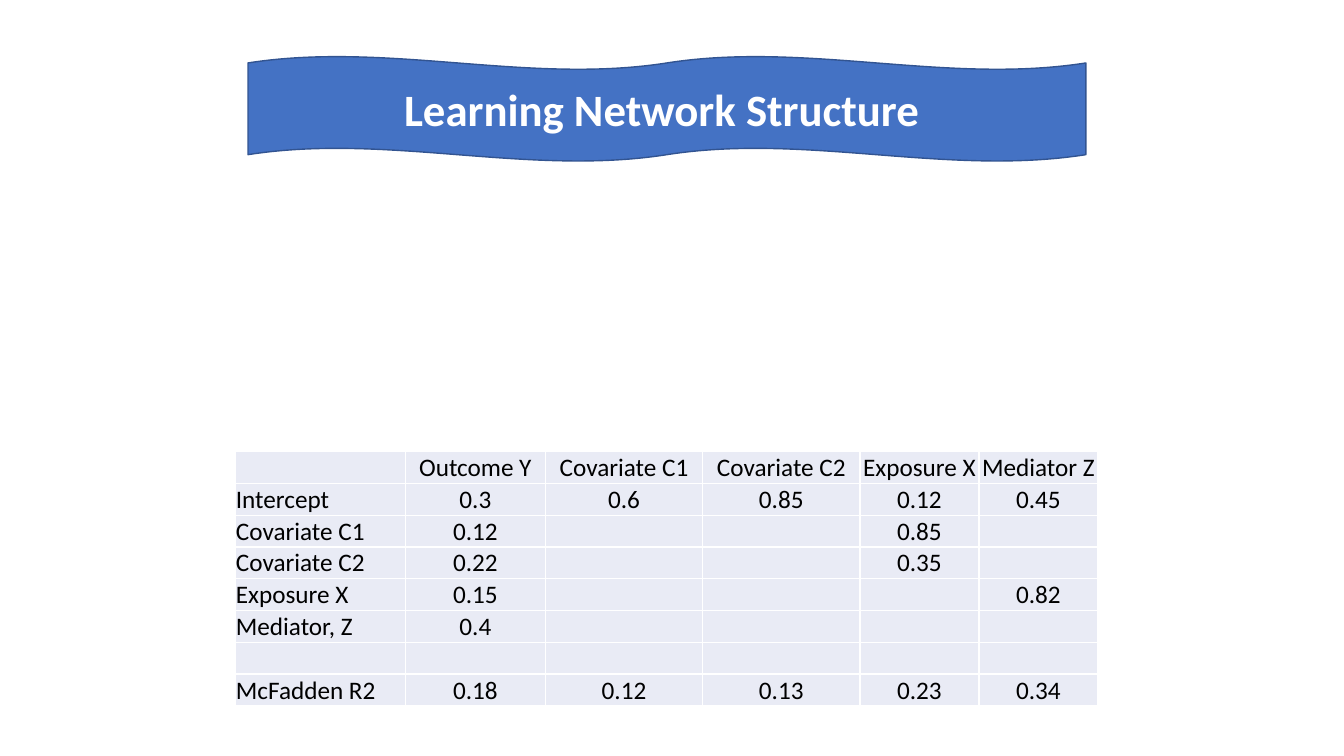
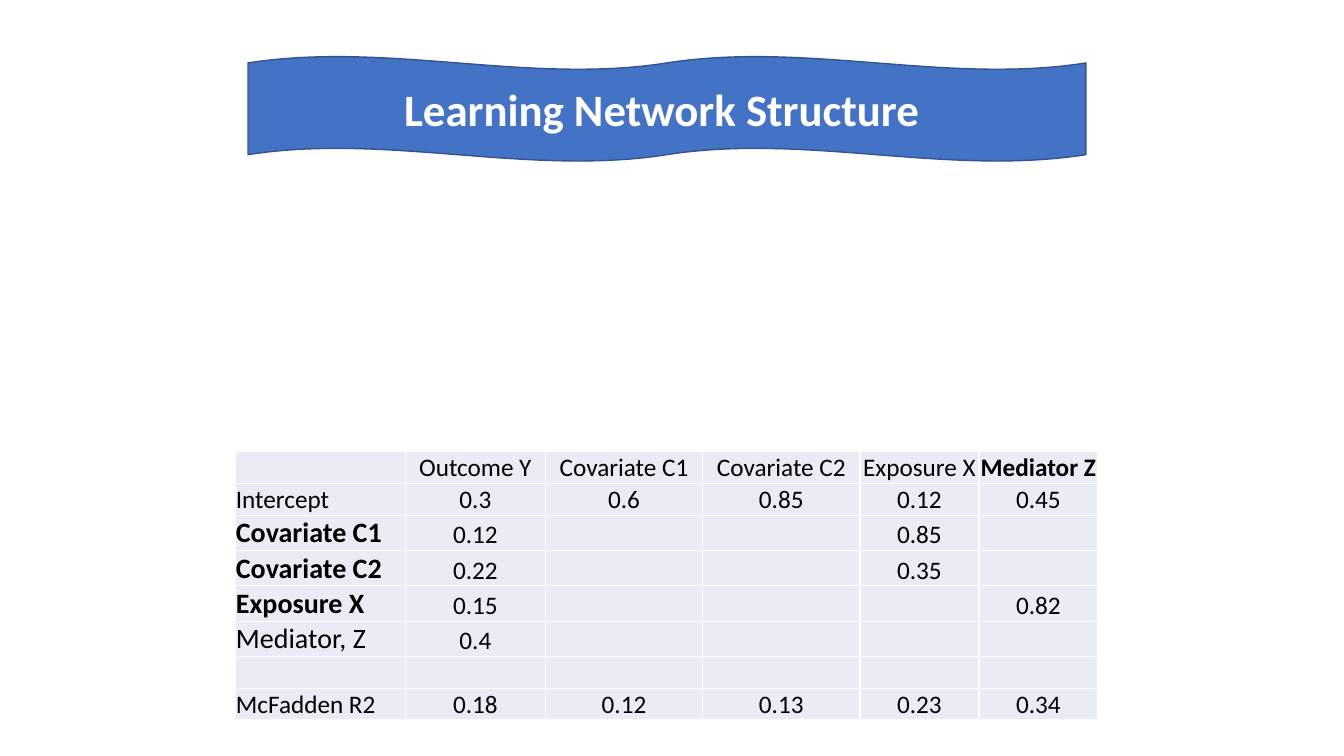
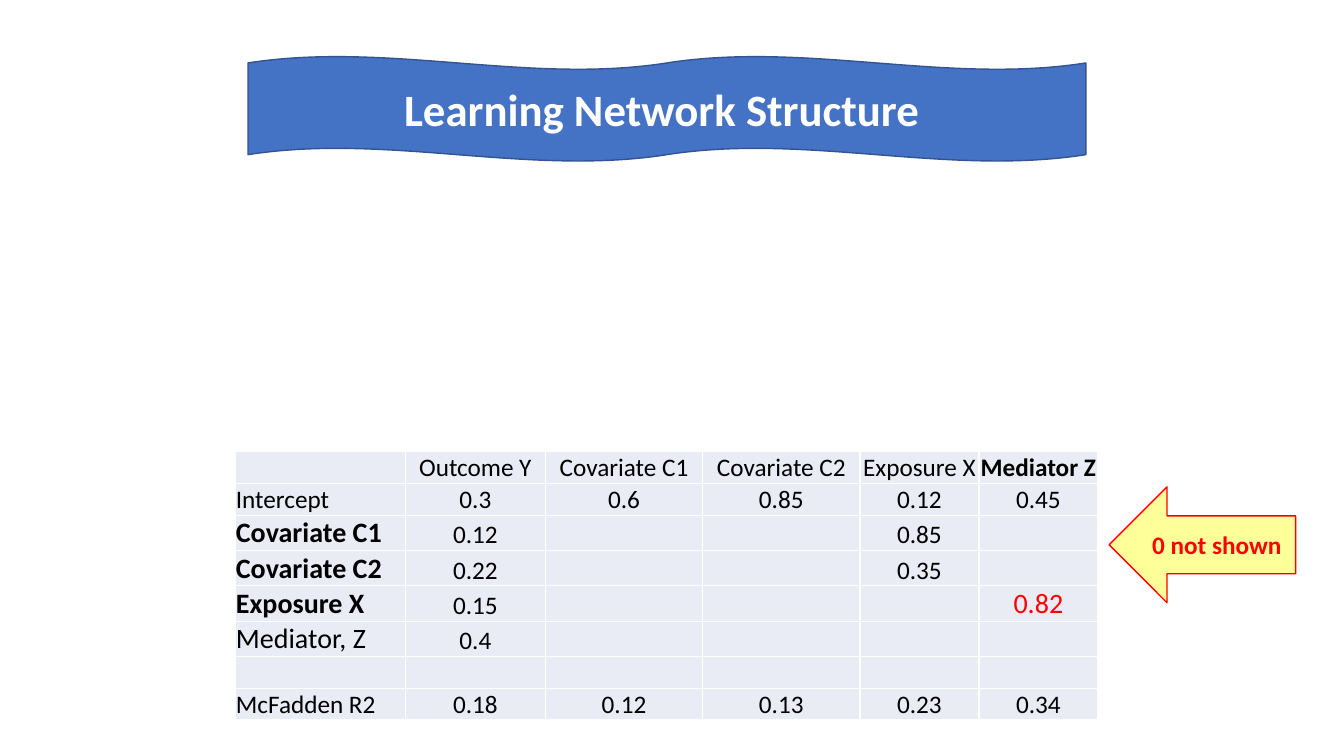
from pptx import Presentation
from pptx.dml.color import RGBColor
from pptx.enum.shapes import MSO_SHAPE as Shape
from pptx.enum.text import MSO_ANCHOR as Anchor, PP_ALIGN as Align
from pptx.util import Inches, Pt

BLUE, NAVY, WHITE, BLACK = "4472C4", "325491", "FFFFFF", "000000"
PALE, RED, YELLOW = "E9EBF5", "FF0000", "FFFF99"
BLANK_LAYOUT = 6

TITLE = "Learning Network Structure "
COLUMN_WIDTHS = [1.69, 1.39, 1.56, 1.56, 1.18, 1.18]
ROWS = [
    ["", "Outcome Y", "Covariate C1", "Covariate C2", "Exposure X", "Mediator Z"],
    ["Intercept", "0.3", "0.6", "0.85", "0.12", "0.45"],
    ["Covariate C1", "0.12", "", "", "0.85", ""],
    ["Covariate C2", "0.22", "", "", "0.35", ""],
    ["Exposure X", "0.15", "", "", "", "0.82"],
    ["Mediator, Z", "0.4", "", "", "", ""],
    ["", "", "", "", "", ""],
    ["McFadden R2", "0.18", "0.12", "0.13", "0.23", "0.34"],
]

PLAIN = (18, False, BLACK)
mediator_styles = {(0, 5): (18, True, BLACK), (5, 0): (20, False, BLACK)}
for predictor_row in (2, 3, 4):
    mediator_styles[predictor_row, 0] = (20, True, BLACK)
effect_styles = {**mediator_styles, (4, 5): (20, False, RED)}


def write(frame, text, size, bold, color, align=Align.CENTER):
    para = frame.paragraphs[0]
    para.alignment = align
    span = para.add_run()
    span.text = text
    span.font.name = "Calibri"
    span.font.size = Pt(size)
    span.font.bold = bold
    span.font.color.rgb = RGBColor.from_string(color)


def add_banner(page, kind, place, fill, line, text, size, color):
    box = page.shapes.add_shape(kind, *[Inches(length) for length in place])
    box.shadow.inherit = False
    box.fill.solid()
    box.fill.fore_color.rgb = RGBColor.from_string(fill)
    box.line.color.rgb = RGBColor.from_string(line)
    box.line.width = Pt(1)
    box.text_frame.word_wrap = True
    box.text_frame.vertical_anchor = Anchor.MIDDLE
    write(box.text_frame, text, size, True, color)


deck = Presentation()
deck.slide_width, deck.slide_height = Inches(13.33), Inches(7.5)

for styles in ({}, mediator_styles, effect_styles):
    page = deck.slides.add_slide(deck.slide_layouts[BLANK_LAYOUT])
    add_banner(page, Shape.DOUBLE_WAVE, (2.46, 0.56, 8.31, 1.04),
               BLUE, NAVY, TITLE, 32, WHITE)

    row_heights = [0.35 if styles.get((row, 0), PLAIN)[0] == 20 else 0.31
                   for row in range(len(ROWS))]
    table = page.shapes.add_table(
        len(ROWS), len(COLUMN_WIDTHS), Inches(2.33), Inches(4.48),
        Inches(sum(COLUMN_WIDTHS)), Inches(sum(row_heights))).table
    table.first_row = False
    table.horz_banding = False
    for column, width in zip(table.columns, COLUMN_WIDTHS):
        column.width = Inches(width)
    for row, height in zip(table.rows, row_heights):
        row.height = Inches(height)

    for row, texts in enumerate(ROWS):
        for col, text in enumerate(texts):
            cell = table.cell(row, col)
            cell.fill.solid()
            cell.fill.fore_color.rgb = RGBColor.from_string(PALE)
            cell.margin_left = cell.margin_right = cell.margin_top = Inches(0.01)
            cell.margin_bottom = 0
            cell.vertical_anchor = Anchor.BOTTOM
            if text:
                write(cell.text_frame, text, *styles.get((row, col), PLAIN),
                      align=Align.CENTER if col else Align.LEFT)

add_banner(page, Shape.LEFT_ARROW, (11, 4.83, 1.85, 1.15),
           YELLOW, RED, "0 not shown", 18, RED)

deck.save("out.pptx")
